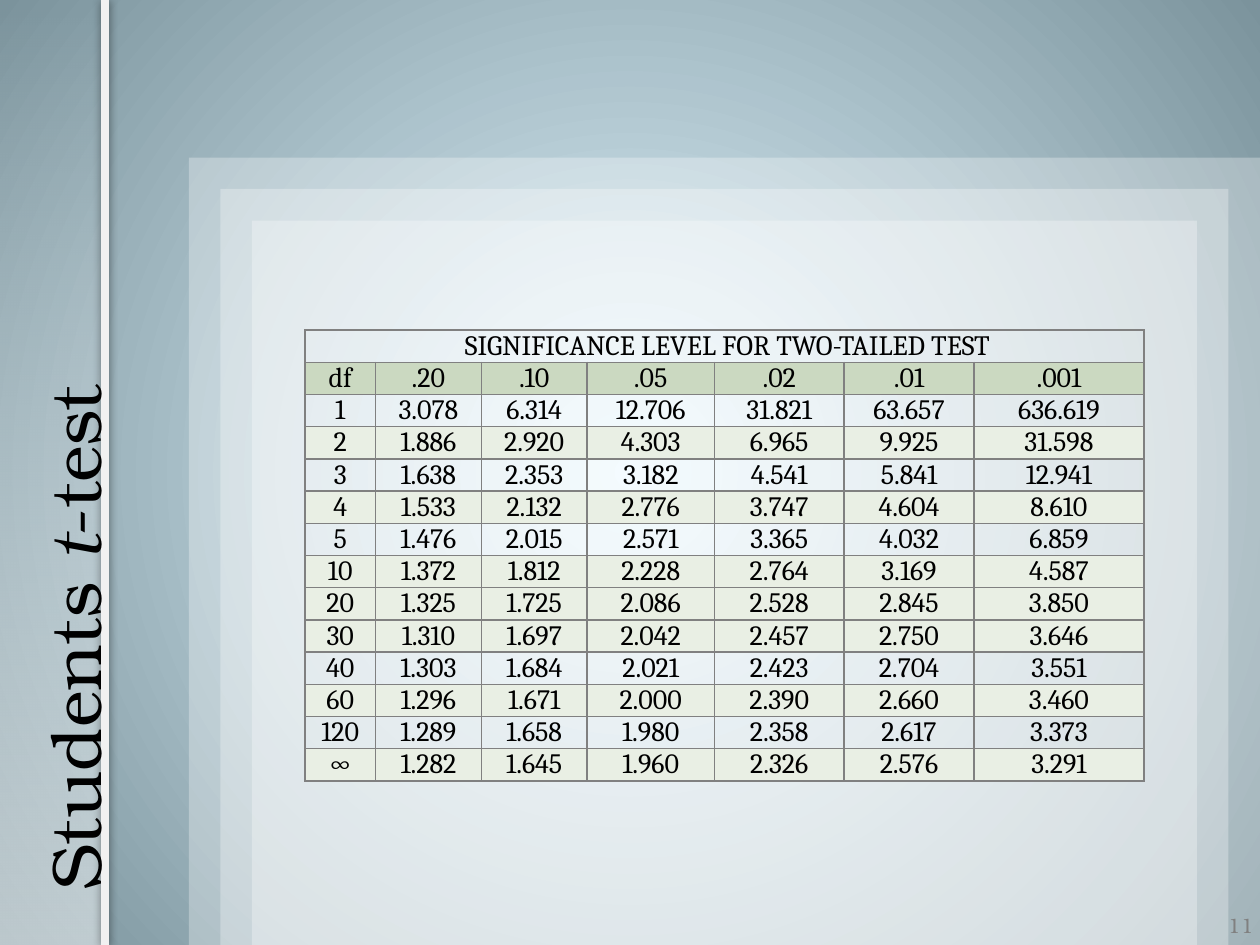
from lxml import etree
from pptx import Presentation
from pptx.dml.color import RGBColor
from pptx.enum.shapes import MSO_CONNECTOR, MSO_SHAPE
from pptx.enum.text import MSO_ANCHOR, MSO_AUTO_SIZE, PP_ALIGN
from pptx.oxml import parse_xml
from pptx.oxml.ns import nsdecls, qn
from pptx.util import Inches, Pt

RECTANGLE = MSO_SHAPE.RECTANGLE
STRAIGHT = MSO_CONNECTOR.STRAIGHT
LEFT, CENTER, RIGHT = PP_ALIGN.LEFT, PP_ALIGN.CENTER, PP_ALIGN.RIGHT
MIDDLE, BOTTOM = MSO_ANCHOR.MIDDLE, MSO_ANCHOR.BOTTOM

BLACK = RGBColor(0x00, 0x00, 0x00)
WHITE = RGBColor(0xFF, 0xFF, 0xFF)
GRAY = RGBColor(0x80, 0x80, 0x80)
RULE_GRAY = RGBColor(0xF1, 0xF1, 0xF1)
SKY = RGBColor(0xE1, 0xF6, 0xFF)
SLATE = RGBColor(0x7B, 0x93, 0x9C)
HEADER_GREEN = RGBColor(0xCB, 0xD9, 0xC1)
BAND_GREEN = RGBColor(0xE9, 0xEF, 0xE4)

SLIDE_W, SLIDE_H = 10, 7.5
TABLE_TITLE = " SIGNIFICANCE LEVEL FOR TWO-TAILED TEST"
COLUMN_WIDTHS = [0.56, 0.84, 0.84, 1.01, 1.03, 1.03, 1.35]
ROW_HEIGHT = 0.25
LEVELS = ["df", ".20", ".10", ".05", ".02", ".01", ".001"]
CRITICAL_VALUES = [
    ["1", "3.078", "6.314", "12.706", "31.821", "63.657", "636.619"],
    ["2", "1.886", "2.920", "4.303", "6.965", "9.925", "31.598"],
    ["3", "1.638", "2.353", "3.182", "4.541", "5.841", "12.941"],
    ["4", "1.533", "2.132", "2.776", "3.747", "4.604", "8.610"],
    ["5", "1.476", "2.015", "2.571", "3.365", "4.032", "6.859"],
    ["10", "1.372", "1.812", "2.228", "2.764", "3.169", "4.587"],
    ["20", "1.325", "1.725", "2.086", "2.528", "2.845", "3.850"],
    ["30", "1.310", "1.697", "2.042", "2.457", "2.750", "3.646"],
    ["40", "1.303", "1.684", "2.021", "2.423", "2.704", "3.551"],
    ["60", "1.296", "1.671", "2.000", "2.390", "2.660", "3.460"],
    ["120", "1.289", "1.658", "1.980", "2.358", "2.617", "3.373"],
    ["∞", "1.282", "1.645", "1.960", "2.326", "2.576", "3.291"],
]
UNFILLED_DF = {"1", "3", "5", "40", "120"}


def add_text(paragraph, text, *, font, size, color=BLACK, italic=False, align=LEFT):
    paragraph.alignment = align
    run = paragraph.add_run()
    run.text = text
    run.font.name = font
    run.font.size = Pt(size)
    run.font.italic = italic
    run.font.color.rgb = color


def set_alphas(shape, *percents):
    """Give the fill colours of a shape, in order, their opacity."""
    for color, percent in zip(shape.element.spPr.iter(qn("a:srgbClr")), percents):
        etree.SubElement(color, qn("a:alpha")).set("val", str(percent * 1000))


def set_gradient(fill, start, end):
    fill.gradient()
    for stop, color, position in zip(fill.gradient_stops, (start, end), (0, 1)):
        stop.color.rgb = color
        stop.position = position


def set_borders(cell, color=GRAY, width=1):
    properties = cell._tc.get_or_add_tcPr()
    for index, side in enumerate(("lnL", "lnR", "lnT", "lnB")):
        properties.insert(index, parse_xml(
            f'<a:{side} {nsdecls("a")} w="{Pt(width)}"><a:solidFill>'
            f'<a:srgbClr val="{color}"/></a:solidFill></a:{side}>'))


class SlideBuilder:
    """Holds the current slide and its fonts."""

    display_font = "TeX Gyre Bonum"
    table_font = "Cambria"

    def __init__(self, slide):
        self.slide = slide

    def background(self):
        fill = self.slide.background.fill
        set_gradient(fill, SKY, SLATE)
        linear = next(self.slide.element.iter(qn("a:lin")))
        linear.getparent().replace(linear, parse_xml(
            f'<a:path {nsdecls("a")} path="circle">'
            '<a:fillToRect l="50000" t="50000" r="50000" b="50000"/></a:path>'))

    def panel(self, parent, left, top, width, height):
        panel = parent.shapes.add_shape(
            RECTANGLE, Inches(left), Inches(top), Inches(width), Inches(height))
        panel.shadow.inherit = False
        panel.line.fill.background()
        panel.fill.solid()
        panel.fill.fore_color.rgb = WHITE
        return panel

    def nested_panels(self):
        group = self.slide.shapes.add_group_shape()
        for step, width in enumerate((8.5, 8, 7.5)):
            left, top = 1.5 + 0.25 * step, 1.25 + 0.25 * step
            set_alphas(self.panel(group, left, top, width, SLIDE_H - top), 30)

    def side_band(self):
        band = self.panel(self.slide, 0, 0, 0.85, SLIDE_H)
        set_gradient(band.fill, WHITE, WHITE)
        band.fill.gradient_angle = 90
        set_alphas(band, 50, 0)

    def side_rule(self, x):
        rule = self.slide.shapes.add_connector(
            STRAIGHT, Inches(x), 0, Inches(x), Inches(SLIDE_H))
        rule.line.color.rgb = RULE_GRAY
        rule.line.width = Pt(4.5)
        rule.element.spPr.append(parse_xml(
            f'<a:effectLst {nsdecls("a")}><a:outerShdw blurRad="{Pt(5)}" dist="0" dir="0">'
            f'<a:srgbClr val="{BLACK}"><a:alpha val="40000"/></a:srgbClr>'
            '</a:outerShdw></a:effectLst>'))

    def title(self, pieces):
        title = self.slide.shapes.title
        self.slide.shapes.element.append(title.element)  # in front of the band
        title.left, title.top = Inches(-2.91), Inches(3.29)
        title.width, title.height = Inches(6.83), Inches(0.93)
        title.rotation = 270
        frame = title.text_frame
        frame.word_wrap = True
        frame.auto_size = MSO_AUTO_SIZE.NONE
        frame.vertical_anchor = BOTTOM
        for text, italic in pieces:
            add_text(frame.paragraphs[0], text, font=self.display_font, size=40,
                     italic=italic)

    def cell(self, cell, text, fill):
        cell.margin_left = cell.margin_right = Inches(0.07)
        cell.margin_top = cell.margin_bottom = 0
        cell.vertical_anchor = MIDDLE
        if fill is None:
            cell.fill.background()
        else:
            cell.fill.solid()
            cell.fill.fore_color.rgb = fill
        set_borders(cell)
        paragraph = cell.text_frame.paragraphs[0]
        paragraph.space_after = Pt(6)
        add_text(paragraph, text, font=self.table_font, size=16, align=CENTER)

    def significance_table(self):
        title_row = [TABLE_TITLE] + [""] * (len(LEVELS) - 1)
        rows = [(title_row, None), (LEVELS, HEADER_GREEN)]
        rows += [(values, None if values[0] in UNFILLED_DF else BAND_GREEN)
                 for values in CRITICAL_VALUES]
        table = self.slide.shapes.add_table(
            len(rows), len(LEVELS), Inches(2.42), Inches(2.62),
            Inches(sum(COLUMN_WIDTHS)), Inches(ROW_HEIGHT * len(rows))).table
        table.first_row = table.horz_banding = False
        for column, width in zip(table.columns, COLUMN_WIDTHS):
            column.width = Inches(width)
        for row, (texts, fill) in zip(table.rows, rows):
            for cell, text in zip(row.cells, texts):
                self.cell(cell, text, fill)
        table.cell(0, 0).merge(table.cell(0, len(LEVELS) - 1))

    def page_number(self, number):
        box = self.slide.shapes.add_textbox(
            Inches(9.6), Inches(7.19), Inches(0.4), Inches(0.3))
        frame = box.text_frame
        frame.word_wrap = True
        frame.vertical_anchor = MIDDLE
        frame.margin_left = frame.margin_right = Inches(0.05)
        frame.margin_top = frame.margin_bottom = Inches(0.05)
        add_text(frame.paragraphs[0], number, font=self.display_font, size=12,
                 color=GRAY, align=RIGHT)


def main():
    deck = Presentation()
    deck.slide_width, deck.slide_height = Inches(SLIDE_W), Inches(SLIDE_H)
    title_only = deck.slide_layouts[5]
    builder = SlideBuilder(deck.slides.add_slide(title_only))
    builder.background()
    builder.nested_panels()
    builder.side_band()
    builder.side_rule(0.83)
    builder.title([("Students ", False), ("t", True), ("-test", False)])
    builder.significance_table()
    builder.page_number("11")
    deck.save("out.pptx")


if __name__ == "__main__":
    main()
